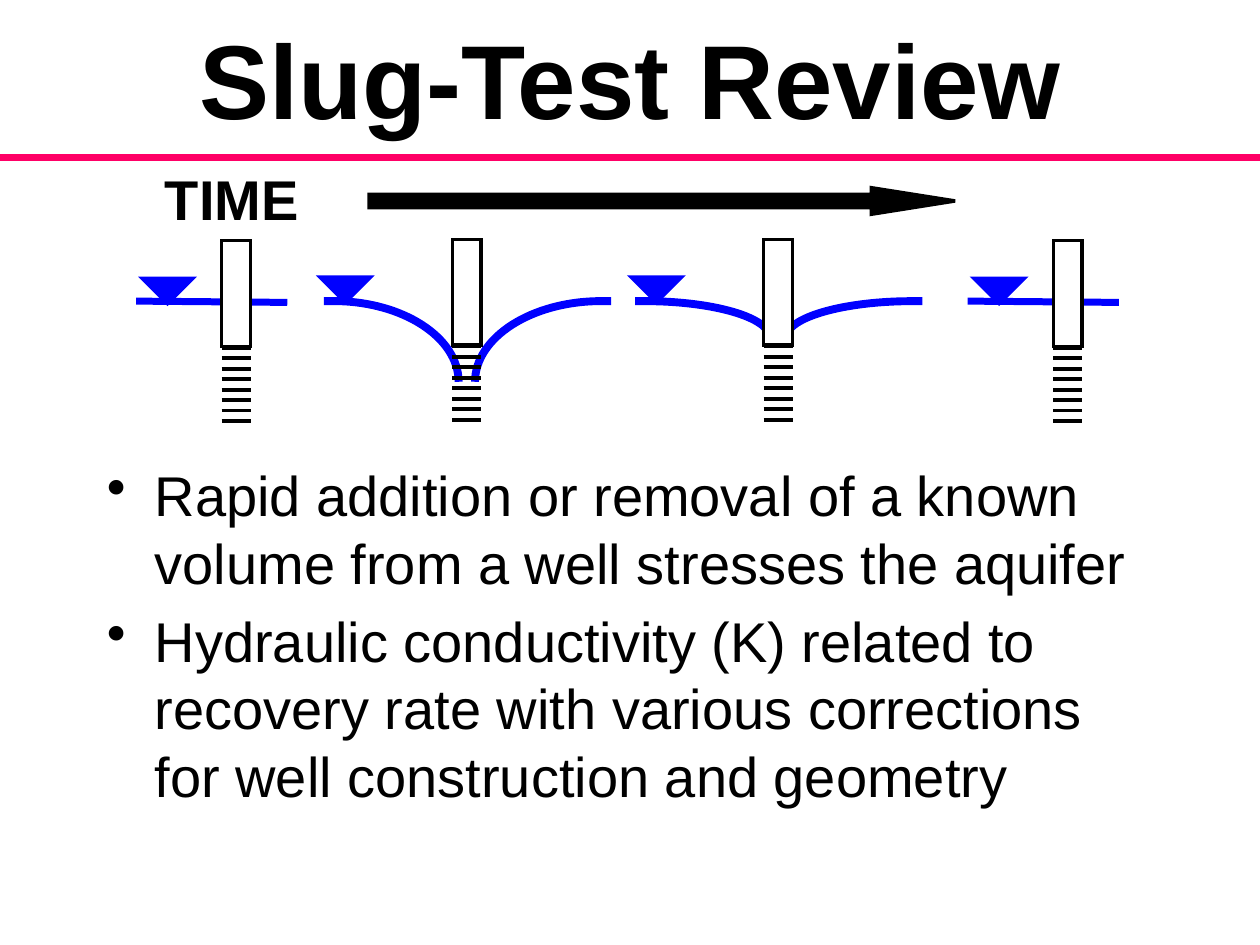
import math
from dataclasses import dataclass

from lxml import etree
from pptx import Presentation
from pptx.dml.color import RGBColor
from pptx.enum.shapes import MSO_CONNECTOR, MSO_SHAPE
from pptx.enum.text import MSO_ANCHOR, PP_ALIGN
from pptx.oxml.ns import qn
from pptx.util import Inches, Pt

LINE = MSO_CONNECTOR.STRAIGHT
RECT, ARROW = MSO_SHAPE.RECTANGLE, MSO_SHAPE.RIGHT_ARROW
WEDGE = MSO_SHAPE.ISOSCELES_TRIANGLE
TOP, MIDDLE = MSO_ANCHOR.TOP, MSO_ANCHOR.MIDDLE
LEFT, CENTER = PP_ALIGN.LEFT, PP_ALIGN.CENTER


@dataclass(frozen=True)
class Theme:
    font: str = "Arial"
    ink: str = "000000"
    paper: str = "FFFFFF"
    water: str = "0000FF"
    rule: str = "FF0066"
    title: int = 60
    body: int = 32


THEME = Theme()


def rgb(code):
    return RGBColor.from_string(code)


def add_text(slide, box, *paras, size=THEME.body, bold=False, align=LEFT,
             anchor=TOP, wrap=True, bullet=False):
    frame = slide.shapes.add_textbox(*map(Inches, box)).text_frame
    frame.word_wrap = wrap
    frame.vertical_anchor = anchor
    for i, text in enumerate(paras):
        para = frame.paragraphs[0] if i == 0 else frame.add_paragraph()
        para.text = text
        para.alignment = align
        if bullet:
            props = para._p.get_or_add_pPr()
            props.set("marL", str(Inches(0.38)))
            props.set("indent", str(-Inches(0.38)))
            etree.SubElement(props, qn("a:buChar")).set("char", "•")
        if i:
            para.space_before = Pt(size * 0.2)
        font = para.font
        font.name, font.size, font.bold = THEME.font, Pt(size), bold
        font.color.rgb = rgb(THEME.ink)


def add_line(slide, start, end, color, width):
    line = slide.shapes.add_connector(LINE, *map(Inches, (*start, *end)))
    line.line.color.rgb = rgb(color)
    line.line.width = Pt(width)
    etree.SubElement(line._element.spPr, qn("a:effectLst"))


def add_shape(slide, kind, box, fill, edge):
    """Add a preset shape with sharp corners."""
    shape = slide.shapes.add_shape(kind, *map(Inches, box))
    shape.shadow.inherit = False
    if fill:
        shape.fill.solid()
        shape.fill.fore_color.rgb = rgb(fill)
    else:
        shape.fill.background()
    shape.line.color.rgb = rgb(edge)
    shape.line.width = Pt(2)
    miter = etree.SubElement(shape._element.spPr.find(qn("a:ln")),
                             qn("a:miter"))
    miter.set("lim", "800000")
    return shape


def add_curve(slide, start, end):
    """Draw a water table that is flat at start and falls steeply to end."""
    (x, y), (foot, low) = start, end
    flat = x + math.copysign(0.08, foot - x)
    bend = 0.55
    points = [(flat, y), (flat + bend * (foot - flat), y),
              (foot, low - bend * (low - y)), (foot, low)]
    path = slide.shapes.build_freeform(Inches(x), Inches(y))
    path.add_line_segments([(Inches(a), Inches(b)) for a, b in points],
                           close=False)
    curve = path.convert_to_shape()
    # The last three points become the handles and end of one Bezier arc.
    track = curve._element.spPr.find(".//" + qn("a:path"))
    arc = etree.SubElement(track, qn("a:cubicBezTo"))
    for step in track.findall(qn("a:lnTo"))[1:]:
        arc.append(step[0])
        track.remove(step)
    curve.shadow.inherit = False
    curve.fill.background()
    curve.line.color.rgb = rgb(THEME.water)
    curve.line.width = Pt(4.5)


def add_well(slide, x, y, fill=THEME.paper):
    """Draw a casing with its slotted screen below."""
    wide, high = 0.23, 0.84
    add_shape(slide, RECT, (x, y, wide, high), fill, THEME.ink)
    for i in range(8):
        slot = y + high + 0.01 + 0.083 * i
        add_line(slide, (x, slot), (x + wide, slot), THEME.ink, 2.25)


def add_mark(slide, x, y):
    mark = add_shape(slide, WEDGE, (x, y, 0.4, 0.2), THEME.water, THEME.water)
    mark._element.spPr.find(qn("a:xfrm")).set("flipV", "1")


def draw_rest(slide, x, y):
    """Draw a well whose water table is level."""
    add_line(slide, (x, y + 0.48), (x + 1.2, y + 0.49), THEME.water, 4)
    add_mark(slide, x + 0.05, y + 0.3)
    add_well(slide, x + 0.68, y)


def draw_drop(slide, x, y, depth, fill):
    """Draw a well whose water table is drawn down by depth."""
    level = y + 0.49
    for rim, foot in ((0.03, 1.1), (2.31, 1.23)):
        add_curve(slide, (x + rim, level), (x + foot, level + depth))
    add_well(slide, x + 1.05, y, fill)
    add_mark(slide, x, y + 0.3)


def draw_head(slide, wide, high):
    add_line(slide, (0, high), (wide, high), THEME.rule, 4.5)
    add_text(slide, (0, 0, wide, high - 0.02), "Slug-Test Review",
             size=THEME.title, bold=True, align=CENTER, anchor=MIDDLE)


def draw_time(slide, x, y):
    add_text(slide, (x, y, 1.68, 0.48), "TIME", bold=True, align=CENTER,
             anchor=MIDDLE, wrap=False)
    arrow = add_shape(slide, ARROW, (x + 1.93, y + 0.16, 4.65, 0.21),
                      THEME.ink, THEME.ink)
    arrow.adjustments[0] = 0.5
    arrow.adjustments[1] = 3.16


def draw_wells(slide, y):
    draw_rest(slide, 1.08, y + 0.01)
    draw_drop(slide, 2.54, y, 0.64, None)
    draw_drop(slide, 5.01, y, 0.29, THEME.paper)
    draw_rest(slide, 7.68, y + 0.01)


def main():
    deck = Presentation()
    deck.slide_width, deck.slide_height = Inches(10), Inches(7.5)
    slide = deck.slides.add_slide(deck.slide_layouts[6])
    draw_head(slide, 10, 1.25)
    add_text(
        slide, (0.75, 3.61, 8.5, 3.34),
        "Rapid addition or removal of a known volume from a well stresses "
        "the aquifer",
        "Hydraulic conductivity (K) related to recovery rate with various "
        "corrections for well construction and geometry",
        bullet=True)
    draw_wells(slide, 1.9)
    draw_time(slide, 1, 1.33)
    deck.save("out.pptx")


if __name__ == "__main__":
    main()
